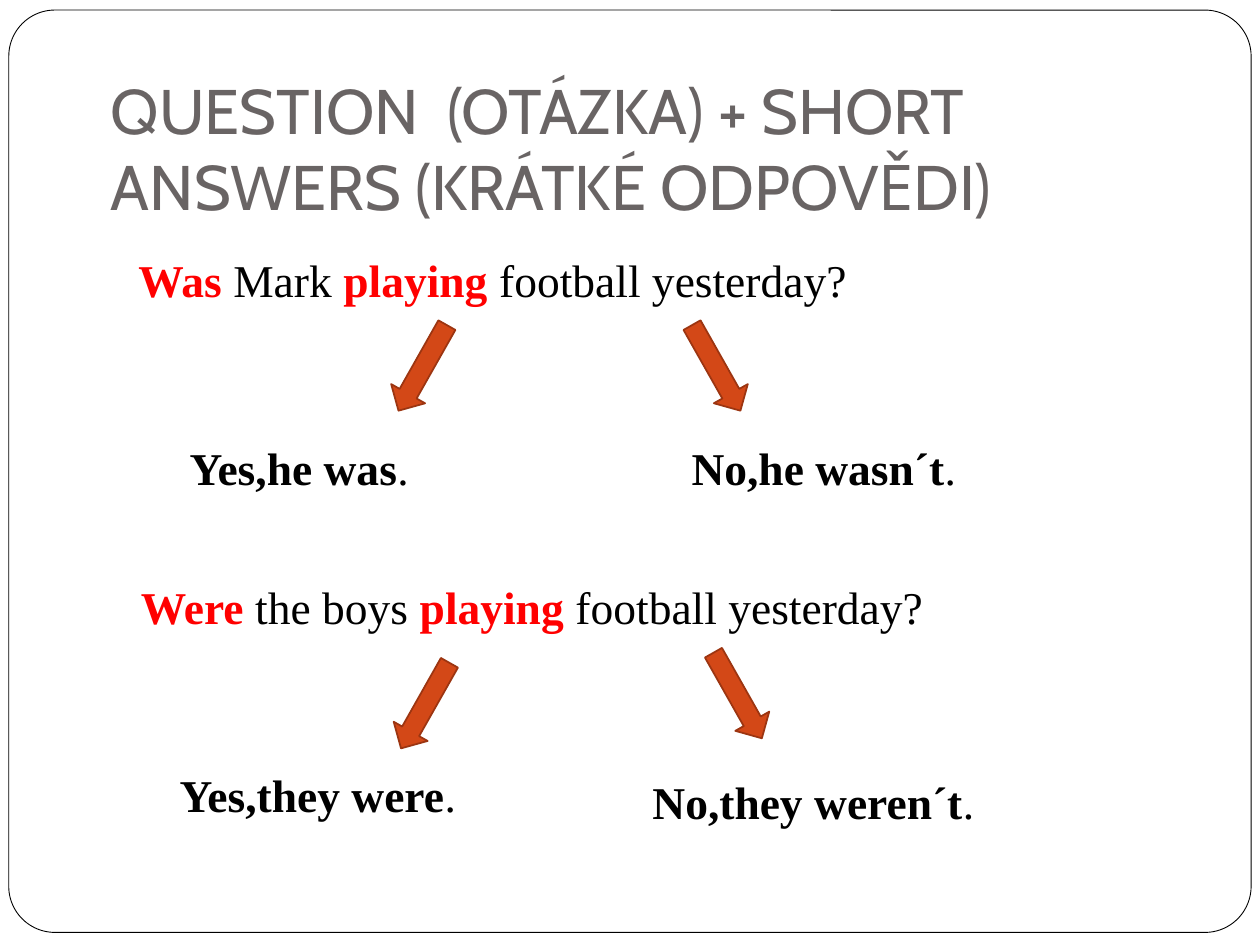
import pptx
import pptx.util
import pptx.dml.color
import pptx.enum.shapes
import pptx.enum.text

Inches, Pt = pptx.util.Inches, pptx.util.Pt
SHAPE = pptx.enum.shapes.MSO_SHAPE
RED, BLACK, GREY, WHITE = "FF0000", "000000", "696464", "FFFFFF"
ORANGE, RUST = "D34817", "9C3511"


def rgb(value):
    return pptx.dml.color.RGBColor.from_string(value)


class Deck:
    """Holds the style and the current slide, and draws each kind of element."""

    heading_font, body_font = "Cabin", "Times New Roman"
    heading_size, body_size = Pt(36), Pt(26)

    def __init__(self):
        self.prs = pptx.Presentation()
        self.prs.slide_width, self.prs.slide_height = Inches(10), Inches(7.5)
        self.s = self.prs.slides.add_slide(self.prs.slide_layouts[5])

    def shape(self, kind, x, y, w, h, fill, line, weight):
        sp = self.s.shapes.add_shape(kind, Inches(x), Inches(y), Inches(w), Inches(h))
        sp.shadow.inherit = False
        sp.fill.solid()
        sp.fill.fore_color.rgb = rgb(fill)
        sp.line.color.rgb = rgb(line)
        sp.line.width = Pt(weight)
        return sp

    def frame(self, x, y, w, h):
        sp = self.shape(SHAPE.ROUNDED_RECTANGLE, x, y, w, h, WHITE, BLACK, 0.5)
        sp.adjustments[0] = 0.05
        self.s.shapes._spTree.insert(2, sp._element)

    def title(self, text, x, y, w, h):
        sp = self.s.shapes.title
        sp.left, sp.top, sp.width, sp.height = map(Inches, (x, y, w, h))
        tf = sp.text_frame
        tf.text = text
        tf.word_wrap = True
        tf.auto_size = pptx.enum.text.MSO_AUTO_SIZE.NONE
        tf.vertical_anchor = pptx.enum.text.MSO_ANCHOR.BOTTOM
        tf.margin_bottom = Inches(0.1)
        p = tf.paragraphs[0]
        p.alignment = pptx.enum.text.PP_ALIGN.LEFT
        p.font.name, p.font.size = self.heading_font, self.heading_size
        p.font.color.rgb = rgb(GREY)

    def text(self, x, y, w, h, runs):
        tf = self.s.shapes.add_textbox(Inches(x), Inches(y), Inches(w), Inches(h)).text_frame
        tf.word_wrap = True
        p = tf.paragraphs[0]
        p.space_before = Pt(5.8)
        p.font.name, p.font.size = self.body_font, self.body_size
        for text, color, bold in runs:
            r = p.add_run()
            r.text = text
            r.font.bold = bold
            r.font.color.rgb = rgb(color)

    def question(self, x, y, verb, subject):
        self.text(x, y, 8.5, 0.84, [
            (verb + " ", RED, True), (subject + " ", BLACK, False),
            ("playing ", RED, True), ("football yesterday?", BLACK, False)])

    def answer(self, x, y, w, h, words):
        self.text(x, y, w, h, [(words, BLACK, True), (".", BLACK, False)])

    def arrow(self, x, y, angle):
        sp = self.shape(SHAPE.DOWN_ARROW, x, y, 0.31, 0.78, ORANGE, RUST, 1)
        sp.rotation = angle


def main():
    deck = Deck()
    deck.frame(0.07, 0.08, 9.86, 7.32)
    deck.title("QUESTION  (OTÁZKA) + SHORT ANSWERS (KRÁTKÉ ODPOVĚDI)", 0.78, 0.3, 8.72, 1.57)

    deck.question(1, 1.95, "Was", "Mark")
    deck.answer(1.33, 3.44, 2.42, 0.84, " Yes,he was")
    deck.answer(5.39, 3.44, 2.8, 0.7, "No,he wasn´t")

    deck.question(1.02, 4.55, "Were", "the boys")
    deck.answer(1.25, 6.04, 2.89, 0.84, " Yes,they were")
    deck.answer(5.08, 6.09, 3.13, 0.7, "No,they weren´t")

    for x, y, angle in [(3.2, 2.53, 29.5), (5.53, 2.53, -29.5),
                        (3.22, 5.21, 29.5), (5.7, 5.13, -29.5)]:
        deck.arrow(x, y, angle)
    deck.prs.save("out.pptx")


if __name__ == "__main__":
    main()
